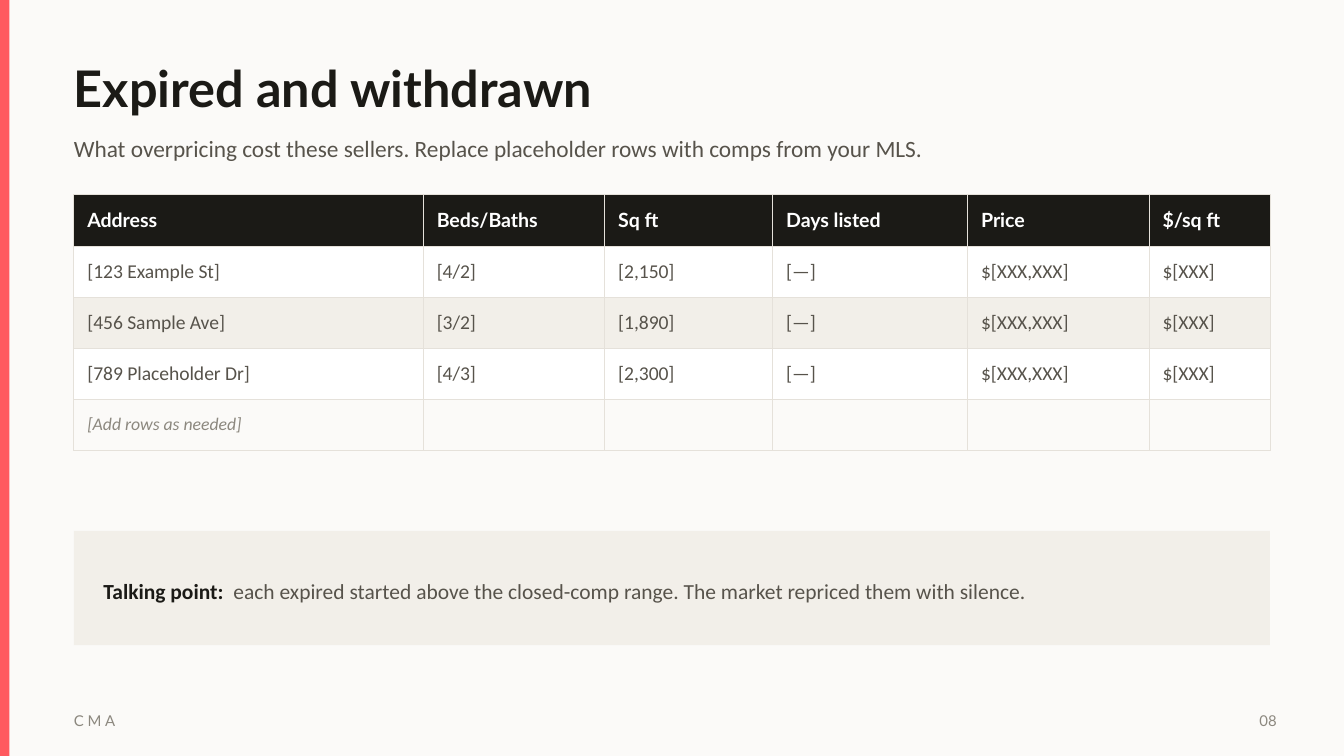
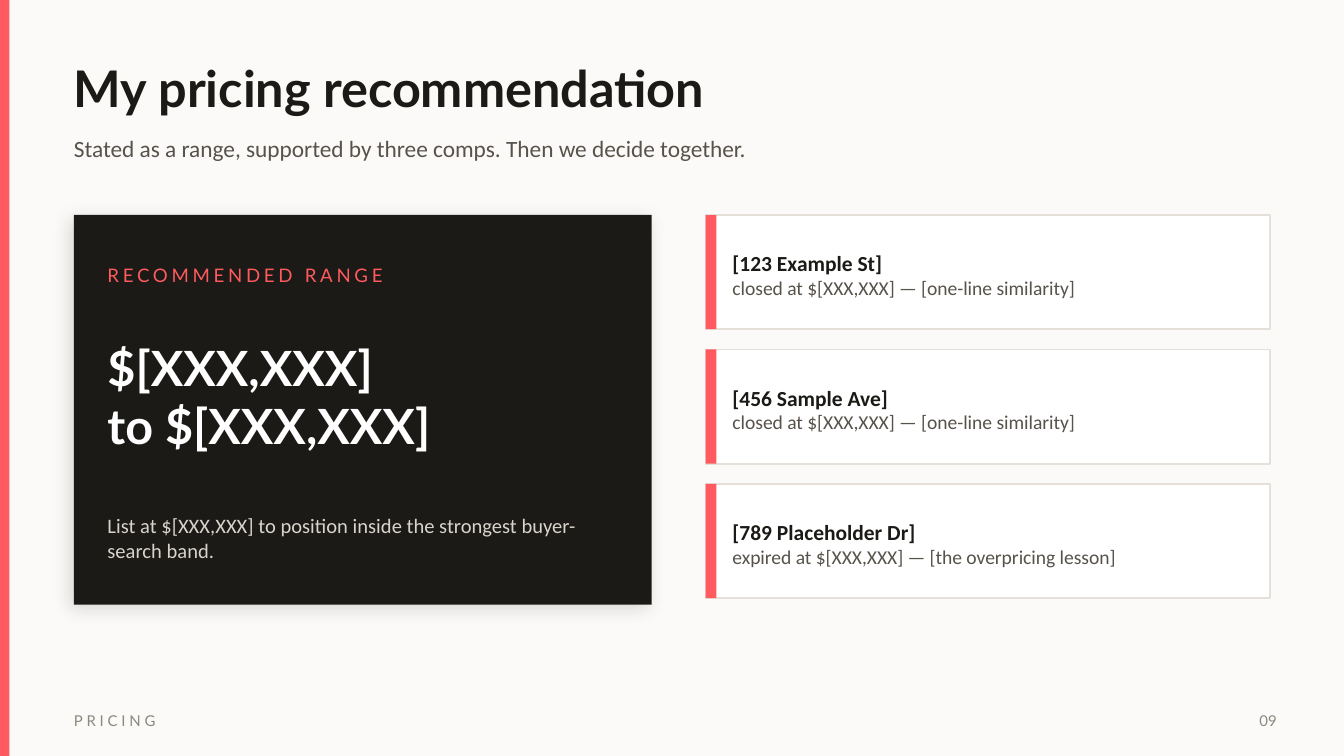
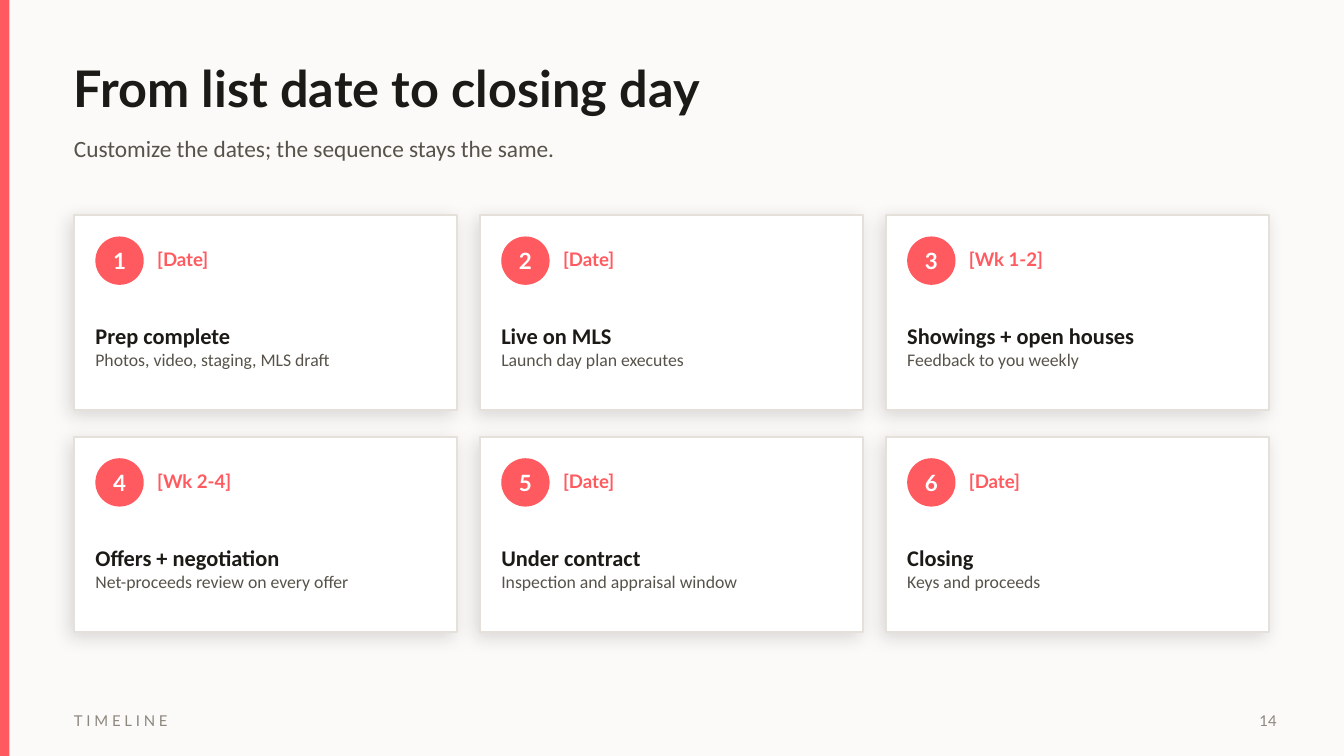
from lxml import etree
from pptx import Presentation
from pptx.dml.color import RGBColor
from pptx.enum import shapes, text
from pptx.oxml import ns
from pptx.util import Pt

HUES = {"page": "FBFAF8", "coral": "FF5A5F", "ink": "1B1A16", "body": "57534B",
        "mute": "8C887F", "white": "FFFFFF", "sand": "F2EFE9", "rule": "E5E1DA",
        "pale": "D8D4CC", "shade": "141210"}
HUE = {name: RGBColor.from_string(code) for name, code in HUES.items()}
RECT, OVAL = shapes.MSO_SHAPE.RECTANGLE, shapes.MSO_SHAPE.OVAL
LEFT, WIDE, TOP = 39.6, 640.8, 115.2


def block(slide, x, y, w, h, fill, line=None, shade=False, kind=RECT):
    shape = slide.shapes.add_shape(kind, Pt(x), Pt(y), Pt(w), Pt(h))
    shape.shadow.inherit = False
    shape.fill.solid()
    shape.fill.fore_color.rgb = HUE[fill]
    if line:
        shape.line.color.rgb = HUE[line]
        shape.line.width = Pt(1)
    else:
        shape.line.fill.background()
    if shade:
        glow = etree.SubElement(shape._element.spPr.find(ns.qn("a:effectLst")),
                                ns.qn("a:outerShdw"), blurRad=str(Pt(10)),
                                dist=str(Pt(3)), dir="8100000", rotWithShape="0")
        tint = etree.SubElement(glow, ns.qn("a:srgbClr"), val=HUES["shade"])
        etree.SubElement(tint, ns.qn("a:alpha"), val="14000")


def words(slide, x, y, w, h, lines, face="Lato", align=None, gap=0):
    """Each line is (text, size, colour, bold); gap is letter spacing in points."""
    frame = slide.shapes.add_textbox(Pt(x), Pt(y), Pt(w), Pt(h)).text_frame
    frame.word_wrap = True
    frame.vertical_anchor = text.MSO_ANCHOR.MIDDLE
    frame.margin_left = frame.margin_right = frame.margin_top = frame.margin_bottom = 0
    for i, (line, size, hue, bold) in enumerate(lines):
        para = frame.paragraphs[0] if i == 0 else frame.add_paragraph()
        para.text = line
        para.alignment = align
        font = para.font
        font.name, font.size, font.bold = face, Pt(size), bold
        font.color.rgb = HUE[hue]
        if gap:
            font._rPr.set("spc", str(gap * 100))
    return frame


deck = Presentation()
deck.slide_width, deck.slide_height = Pt(720), Pt(405)

# Shared frame: side band, footer, title and subtitle
heads = [
    ("CMA", "08", "Expired and withdrawn",
     "What overpricing cost these sellers. Replace placeholder rows with comps from your MLS."),
    ("PRICING", "09", "My pricing recommendation",
     "Stated as a range, supported by three comps. Then we decide together."),
    ("TIMELINE", "14", "From list date to closing day",
     "Customize the dates; the sequence stays the same."),
]
for tag, page, title, sub in heads:
    slide = deck.slides.add_slide(deck.slide_layouts[6])
    slide.background.fill.solid()
    slide.background.fill.fore_color.rgb = HUE["page"]
    block(slide, 0, 0, 5.04, 405, "coral")
    words(slide, LEFT, 375, 360, 21.6, [(tag, 8, "mute", False)], gap=2)
    words(slide, 648, 375, 36, 21.6, [(page, 8, "mute", False)], align=text.PP_ALIGN.RIGHT)
    words(slide, LEFT, 24.5, WIDE, 44.6, [(title, 27, "ink", True)])
    words(slide, LEFT, 67.7, WIDE, 23, [(sub, 12.5, "body", False)], "Calibri")
comps, price, dates = deck.slides

# Comps table
rows = [
    ["Address", "Beds/Baths", "Sq ft", "Days listed", "Price", "$/sq ft"],
    ["[123 Example St]", "[4/2]", "[2,150]", "[—]", "$[XXX,XXX]", "$[XXX]"],
    ["[456 Sample Ave]", "[3/2]", "[1,890]", "[—]", "$[XXX,XXX]", "$[XXX]"],
    ["[789 Placeholder Dr]", "[4/3]", "[2,300]", "[—]", "$[XXX,XXX]", "$[XXX]"],
    ["[Add rows as needed]", "", "", "", "", ""],
]
looks = [("ink", "white", "Lato", 10.5)]
looks += [(fill, "body", "Calibri", 10.5) for fill in ("white", "sand", "white")]
looks += [("page", "mute", "Calibri", 9.5)]
high = 27.36
grid = comps.shapes.add_table(5, 6, Pt(LEFT), Pt(104.4), Pt(WIDE), Pt(5 * high)).table
grid.horz_banding = False
for col, wide in zip(grid.columns, (187.2, 97.2, 90, 104.4, 97.2, 64.8)):
    col.width = Pt(wide)
for r, (row, (fill, hue, face, size)) in enumerate(zip(rows, looks)):
    grid.rows[r].height = Pt(high)
    for c, word in enumerate(row):
        cell = grid.cell(r, c)
        cell.vertical_anchor = text.MSO_ANCHOR.MIDDLE
        for side in ("lnL", "lnR", "lnT", "lnB"):
            edge = etree.SubElement(cell._tc.get_or_add_tcPr(), ns.qn("a:" + side), w=str(Pt(0.5)))
            ink = etree.SubElement(edge, ns.qn("a:solidFill"))
            etree.SubElement(ink, ns.qn("a:srgbClr"), val=HUES["rule"])
        cell.fill.solid()
        cell.fill.fore_color.rgb = HUE[fill]
        para = cell.text_frame.paragraphs[0]
        if word:
            para.text = word
        else:
            para._p.get_or_add_endParaRPr().set("sz", "950")
        font = para.font
        font.name, font.size = face, Pt(size)
        font.bold, font.italic = r == 0, r == 4
        font.color.rgb = HUE[hue]

# Talking point
block(comps, LEFT, 284.4, WIDE, 61.2, "sand")
note = words(comps, 55.44, 296.64, 609.12, 39.6, [("Talking point:", 11.5, "ink", True)], "Calibri")
para = note.paragraphs[0]
space = para.add_run()
space.text = " "
space.font._element.set("spc", "260") if hasattr(space.font, "_element") else space.font._rPr.set("spc", "260")
rest = para.add_run()
rest.text = "each expired started above the closed-comp range. The market repriced them with silence."
rest.font.bold = False
rest.font.color.rgb = HUE["body"]

# Recommended range
block(price, LEFT, TOP, 309.6, 208.8, "ink", shade=True)
words(price, 57.6, 136.8, 273.6, 21.6, [("RECOMMENDED RANGE", 10, "coral", False)], gap=2)
words(price, 57.6, 162, 273.6, 100.8,
      [("$[XXX,XXX]", 26, "white", True), ("to $[XXX,XXX]", 26, "white", True)])
words(price, 57.6, 262.8, 273.6, 50.4,
      [("List at $[XXX,XXX] to position inside the strongest buyer-search band.", 11, "pale", False)],
      "Calibri")

# Supporting comps
proofs = [
    ("[123 Example St]", "closed at $[XXX,XXX] — [one-line similarity]"),
    ("[456 Sample Ave]", "closed at $[XXX,XXX] — [one-line similarity]"),
    ("[789 Placeholder Dr]", "expired at $[XXX,XXX] — [the overpricing lesson]"),
]
for i, (home, fact) in enumerate(proofs):
    y = TOP + 72 * i
    block(price, 378, y, 302.4, 61.2, "white", "rule")
    block(price, 378, y, 5.76, 61.2, "coral")
    words(price, 392.4, y + 8.64, 277.2, 46.8,
          [(home, 11.5, "ink", True), (fact, 10.5, "body", False)], "Calibri")

# Timeline cards
steps = [
    ("[Date]", "Prep complete", "Photos, video, staging, MLS draft"),
    ("[Date]", "Live on MLS", "Launch day plan executes"),
    ("[Wk 1-2]", "Showings + open houses", "Feedback to you weekly"),
    ("[Wk 2-4]", "Offers + negotiation", "Net-proceeds review on every offer"),
    ("[Date]", "Under contract", "Inspection and appraisal window"),
    ("[Date]", "Closing", "Keys and proceeds"),
]
for i, (date, step, fact) in enumerate(steps):
    x, y = LEFT + 217.44 * (i % 3), TOP + 118.8 * (i // 3)
    dot = (x + 11.52, y + 11.52, 25.92, 25.92)
    block(dates, x, y, 205.2, 104.4, "white", "rule", shade=True)
    block(dates, *dot, "coral", kind=OVAL)
    words(dates, *dot, [(str(i + 1), 12, "white", True)], align=text.PP_ALIGN.CENTER)
    words(dates, x + 44.64, y + 14.4, 151.2, 18.72, [(date, 10, "coral", True)])
    words(dates, x + 11.52, y + 39.6, 183.6, 61.2,
          [(step, 12, "ink", True), (fact, 9.5, "body", False)], "Calibri")

deck.save("out.pptx")
